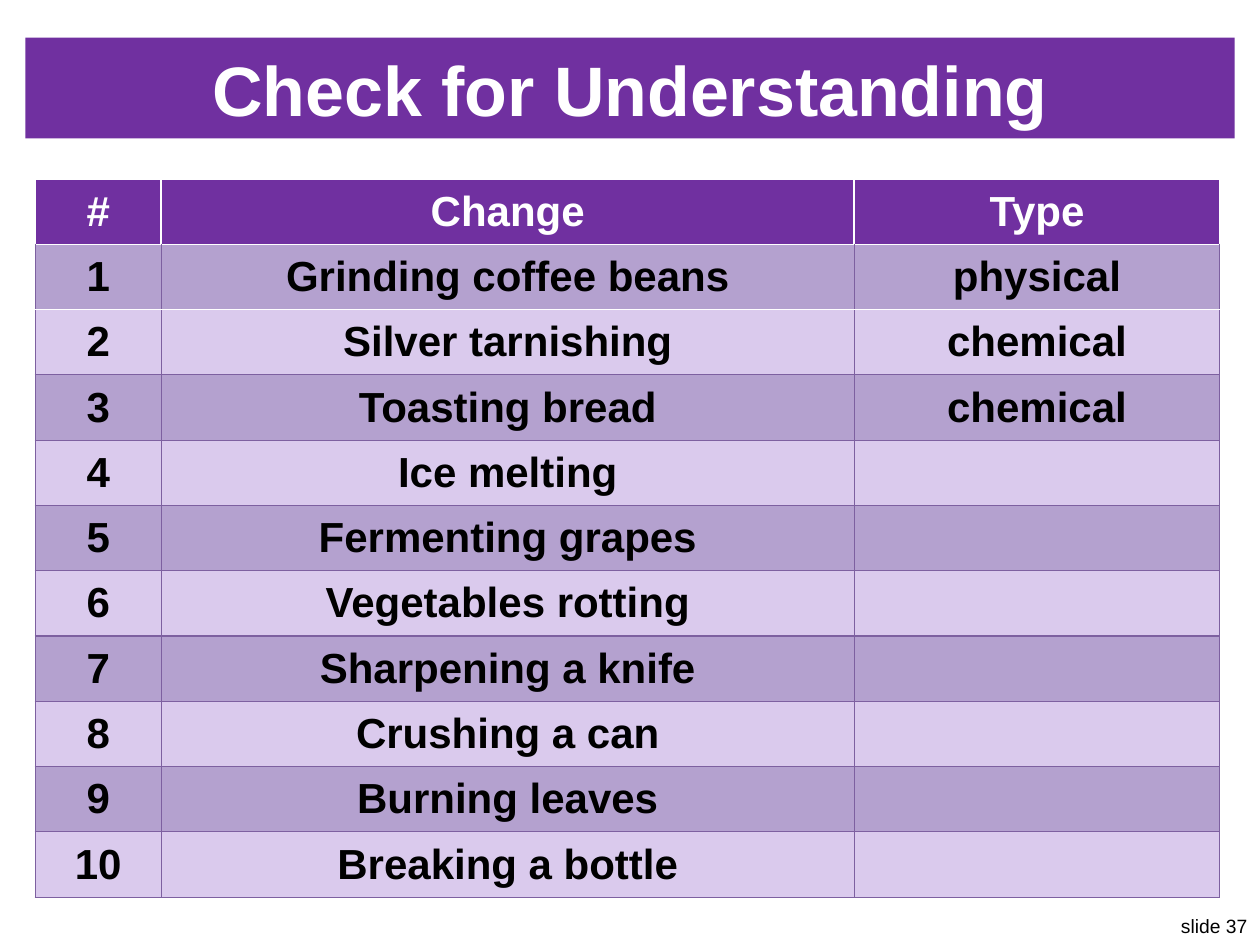
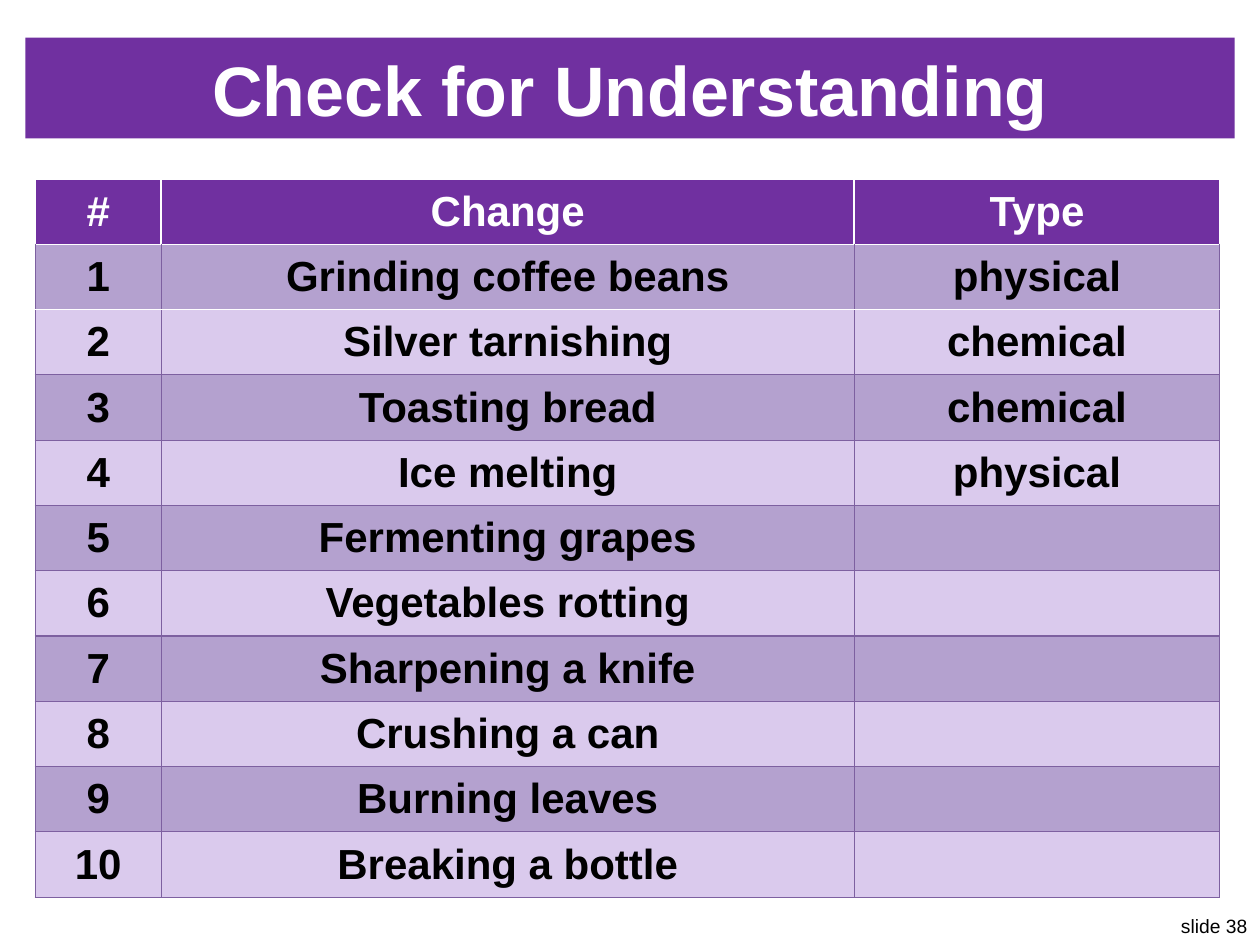
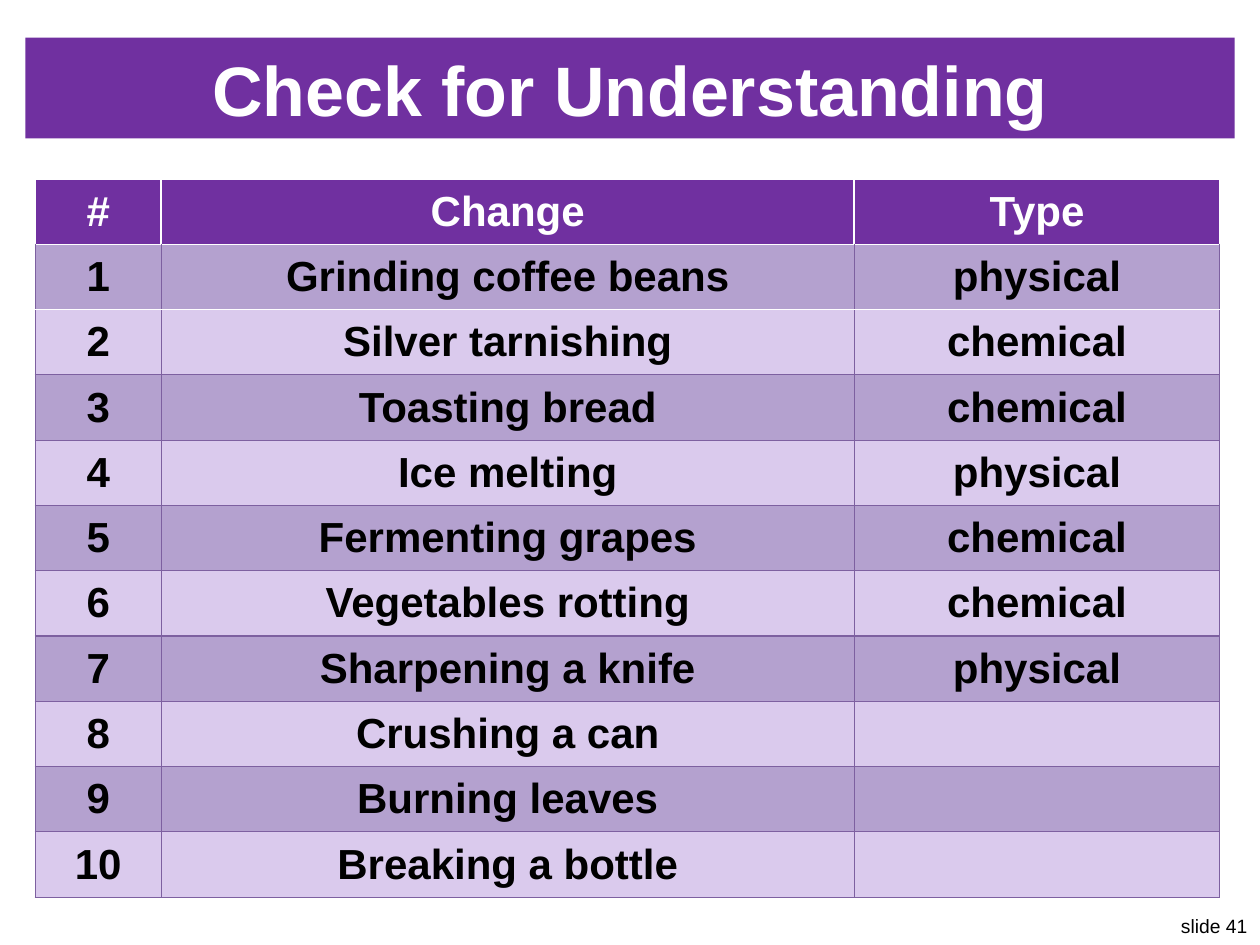
from dataclasses import dataclass

from lxml.etree import SubElement
from pptx import Presentation
from pptx.dml.color import RGBColor as Rgb
from pptx.enum.text import MSO_ANCHOR as Anchor, MSO_AUTO_SIZE as AutoSize, PP_ALIGN as Align
from pptx.oxml.ns import qn
from pptx.util import Cm, Pt

TITLE = "Check for Understanding"
HEADINGS = ("#", "Change", "Type")
CHANGES = (
    "Grinding coffee beans", "Silver tarnishing", "Toasting bread", "Ice melting",
    "Fermenting grapes", "Vegetables rotting", "Sharpening a knife",
    "Crushing a can", "Burning leaves", "Breaking a bottle",
)
ANSWERS = ("physical", "chemical", "chemical", "physical", "chemical", "chemical", "physical")
ANSWERS_SHOWN = {37: 3, 38: 4, 41: 7}  # page number: answers revealed so far
COLUMN_WIDTHS = (2.54, 13.97, 7.37)
TABLE_HEIGHT = 14.48


@dataclass(frozen=True)
class Theme:
    font: str = "Arial"
    purple: str = "7030A0"
    dark_band: str = "B4A1CF"
    light_band: str = "DACAED"
    grid: str = "7D60A0"
    white: str = "FFFFFF"
    black: str = "000000"
    title_size: int = 40
    table_size: int = 24
    page_size: float = 11
    grid_width: float = 0.75
    header_width: float = 1


class Deck:
    def __init__(self, theme):
        self.theme = theme
        self.presentation = Presentation()
        self.presentation.slide_width = Cm(25.4)
        self.presentation.slide_height = Cm(19.05)
        self.slide = None

    def new_slide(self):
        title_only = self.presentation.slide_layouts[5]
        self.slide = self.presentation.slides.add_slide(title_only)

    def style_text(self, frame, size, color, align, bold=False):
        for paragraph in frame.paragraphs:
            paragraph.alignment = align
            for run in paragraph.runs:
                run.font.name = self.theme.font
                run.font.size = Pt(size)
                run.font.bold = bold
                run.font.color.rgb = Rgb.from_string(color)

    def title(self, text):
        band = self.slide.shapes.title
        band.left, band.top, band.width, band.height = Cm(0.51), Cm(0.76), Cm(24.38), Cm(2.03)
        band.fill.solid()
        band.fill.fore_color.rgb = Rgb.from_string(self.theme.purple)
        frame = band.text_frame
        frame.text = text
        frame.auto_size = AutoSize.NONE
        frame.vertical_anchor = Anchor.MIDDLE
        self.style_text(frame, self.theme.title_size, self.theme.white, Align.CENTER, bold=True)

    def page_number(self, number):
        footer = self.slide.shapes.add_textbox(Cm(23.5), Cm(18.31), Cm(1.9), Cm(0.74))
        frame = footer.text_frame
        frame.text = f"slide {number}"
        frame.word_wrap = False
        frame.auto_size = AutoSize.SHAPE_TO_FIT_TEXT
        self.style_text(frame, self.theme.page_size, self.theme.black, Align.RIGHT)

    def cell_border(self, cell, side, color, width):
        line = SubElement(cell._tc.get_or_add_tcPr(), qn(f"a:ln{side}"), w=str(Pt(width)))
        fill = SubElement(line, qn("a:solidFill"))
        SubElement(fill, qn("a:srgbClr"), val=color)

    def style_cell(self, cell, row):
        theme = self.theme
        header = row == 0
        # The lines around the header and under the first change are white.
        white_sides = {0: "LRTB", 1: "TB", 2: "T"}.get(row, "")
        for side in "LRTB":
            color = theme.white if side in white_sides else theme.grid
            near_header = header or (row == 1 and side == "T")
            self.cell_border(cell, side, color, theme.header_width if near_header else theme.grid_width)
        band = theme.dark_band if row % 2 else theme.light_band
        cell.fill.solid()
        cell.fill.fore_color.rgb = Rgb.from_string(theme.purple if header else band)
        cell.vertical_anchor = Anchor.MIDDLE
        self.style_text(cell.text_frame, theme.table_size,
                        theme.white if header else theme.black, Align.CENTER, bold=True)

    def table(self, rows):
        table = self.slide.shapes.add_table(
            len(rows), len(COLUMN_WIDTHS), Cm(0.71), Cm(3.61),
            Cm(sum(COLUMN_WIDTHS)), Cm(TABLE_HEIGHT)).table
        table.horz_banding = False
        for column, width in zip(table.columns, COLUMN_WIDTHS):
            column.width = Cm(width)
        for row, values in enumerate(rows):
            table.rows[row].height = Cm(TABLE_HEIGHT / len(rows))
            for column, value in enumerate(values):
                cell = table.cell(row, column)
                if value:
                    cell.text_frame.text = value
                self.style_cell(cell, row)


def quiz_rows(shown):
    """Return the headings and every change, with only the first answers filled in."""
    rows = [HEADINGS]
    for number, change in enumerate(CHANGES, start=1):
        answer = ANSWERS[number - 1] if number <= shown else ""
        rows.append((str(number), change, answer))
    return rows


def main():
    deck = Deck(Theme())
    for page, shown in ANSWERS_SHOWN.items():
        deck.new_slide()
        deck.page_number(page)
        deck.title(TITLE)
        deck.table(quiz_rows(shown))
    deck.presentation.save("out.pptx")


if __name__ == "__main__":
    main()
